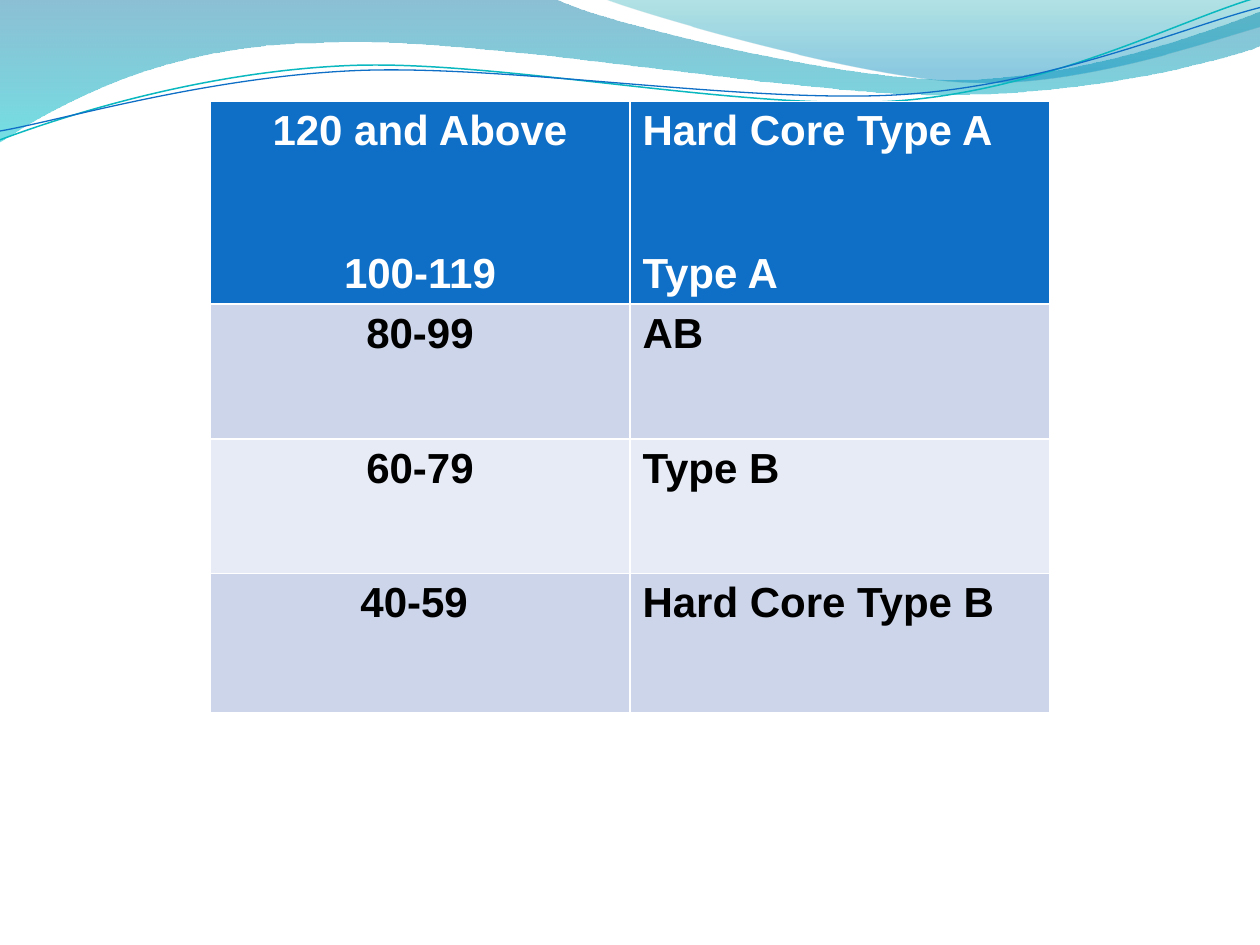
import math

import pptx
import pptx.util
import pptx.dml.color
import pptx.enum.text
import pptx.oxml
import pptx.oxml.ns
from lxml import etree

RGB = pptx.dml.color.RGBColor
WHITE = RGB(0xFF, 0xFF, 0xFF)
BLACK = RGB(0, 0, 0)
BLUE = RGB(0x0F, 0x6F, 0xC6)
TEAL = RGB(0x0A, 0xB8, 0xBF)
DEEP_BLUE = RGB(0x00, 0x74, 0xA1)
CYAN = RGB(0x00, 0xC6, 0xCF)
GREEN = RGB(0x00, 0xA1, 0xA9)
SKY = RGB(0x00, 0x8B, 0xBF)
BAND_DARK = RGB(0xCC, 0xD5, 0xEA)
BAND_LIGHT = RGB(0xE7, 0xEB, 0xF5)

FONT = "Arial"
SIZE = 24
GROUP_GAP = 55  # two line heights, in points
TILT = 357.3  # rotation of the two thin lines, in degrees
CENTER = pptx.enum.text.PP_ALIGN.CENTER
LEFT = pptx.enum.text.PP_ALIGN.LEFT

# Wave outlines on a grid of 10 columns across the slide:
# two numbers are a straight step, six are a Bezier curve.
BACK_WAVE = [
    (0, -0.01), (4.4, -0.01),
    (4.76, 0.17, 6.64, 0.63, 7.58, 0.63), (8.53, 0.63, 9.58, 0.26, 10, 0.09),
    (10.01, 0.36),
    (9.83, 0.44, 8.7, 0.76, 7.46, 0.75), (6.22, 0.75, 3.82, 0.28, 2.57, 0.34),
    (1.29, 0.35, 0.46, 0.83, -0.01, 1.13),
]
FRONT_WAVE = [
    (4.79, -0.01),
    (5.09, 0.11, 6.82, 0.62, 7.69, 0.65), (8.56, 0.69, 9.61, 0.32, 10, 0.21),
    (10, 0),
]
TEAL_LINE = [
    (0, 1.11),
    (0.48, 0.93, 1.58, 0.57, 2.77, 0.52), (3.95, 0.47, 5.93, 0.89, 7.13, 0.8),
    (8.33, 0.71, 9.38, 0.15, 9.98, -0.02),
]
BLUE_LINE = [
    (0, 1.04),
    (0.47, 0.96, 1.64, 0.61, 2.83, 0.56), (4.03, 0.51, 5.97, 0.83, 7.17, 0.75),
    (8.36, 0.67, 9.41, 0.21, 10, 0.06),
]
LINE_CENTER = (4.99, 0.58)

# Each row: height, fill, text colour, score ranges, types
ROWS = [
    (1.6, BLUE, WHITE, ["120 and Above", "100-119"], ["Hard Core Type A", "Type A"]),
    (1.07, BAND_DARK, BLACK, ["80-99"], ["AB"]),
    (1.07, BAND_LIGHT, BLACK, ["60-79"], ["Type B"]),
    (1.1, BAND_DARK, BLACK, ["40-59 "], ["Hard Core Type B"]),
]


def level(outline, degrees):
    """Turn an outline back, so that rotating its shape by degrees restores it."""
    cx, cy = LINE_CENTER
    cos, sin = math.cos(math.radians(degrees)), math.sin(math.radians(degrees))
    turned = []
    for step in outline:
        turned.append(())
        for x, y in zip(step[::2], step[1::2]):
            dx, dy = x - cx, y - cy
            turned[-1] += (cx + dx * cos + dy * sin, cy - dx * sin + dy * cos)
    return turned


def add_outline(s, outline, left, top, unit, close):
    """Build a freeform, joining each three points of a curve into one Bezier."""
    points = [(left + x * unit, top + y * unit)
              for step in outline for x, y in zip(step[::2], step[1::2])]
    builder = s.shapes.build_freeform(*points[0], scale=1.0)
    builder.add_line_segments(points[1:], close=close)
    sp = builder.convert_to_shape()
    sp.shadow.inherit = False
    segments = iter(list(sp.element.iter(pptx.oxml.ns.qn("a:lnTo"))))
    for step in outline[1:]:
        first = next(segments)
        if len(step) == 6:
            curve = etree.Element(pptx.oxml.ns.qn("a:cubicBezTo"))
            first.addprevious(curve)
            for segment in (first, next(segments), next(segments)):
                curve.append(segment[0])
                segment.getparent().remove(segment)
    return sp


def fill_gradient(sp, stops):
    """Fill downwards with (position, colour, opacity in percent) stops."""
    sp.line.fill.background()
    sp.fill.gradient()
    sp.fill.gradient_angle = 270
    for stop, (position, color, _) in zip(sp.fill.gradient_stops, stops):
        stop.position = position
        stop.color.rgb = color
    colors = sp.element.spPr.iter(pptx.oxml.ns.qn("a:srgbClr"))
    for node, (_, _, opacity) in zip(list(colors), stops):
        etree.SubElement(node, pptx.oxml.ns.qn("a:alpha"), val=str(opacity * 1000))


def draw_waves(s, left, top, width):
    unit = width / 10
    for outline, stops in (
        (BACK_WAVE, [(0, DEEP_BLUE, 45), (1, CYAN, 55)]),
        (FRONT_WAVE, [(0, GREEN, 30), (0.8, SKY, 45)]),
    ):
        fill_gradient(add_outline(s, outline, left, top, unit, True), stops)
    for outline, color, weight in ((TEAL_LINE, TEAL, 0.85), (BLUE_LINE, BLUE, 0.75)):
        sp = add_outline(s, level(outline, TILT), left, top, unit, False)
        sp.rotation = TILT
        sp.fill.background()
        sp.line.color.rgb = color
        sp.line.width = pptx.util.Pt(weight)


def add_text(p, text, color=BLACK, align=LEFT, space_before=0):
    p.alignment = align
    if space_before:
        p.space_before = pptx.util.Pt(space_before)
    r = p.add_run()
    r.text = text
    r.font.name = FONT
    r.font.size = pptx.util.Pt(SIZE)
    r.font.bold = True
    r.font.color.rgb = color


def set_borders(cell, color, weight):
    tc_pr = cell._tc.get_or_add_tcPr()
    for side in ("lnL", "lnR", "lnT", "lnB"):
        tc_pr.append(pptx.oxml.parse_xml(
            f'<a:{side} {pptx.oxml.ns.nsdecls("a")} w="{pptx.util.Pt(weight)}">'
            f'<a:solidFill><a:srgbClr val="{color}"/></a:solidFill></a:{side}>'))


def draw_score_table(s, left, top, width):
    heights = [pptx.util.Inches(row[0]) for row in ROWS]
    table = s.shapes.add_table(len(ROWS), 2, left, top, width, sum(heights)).table
    for i, (_, fill, color, *columns) in enumerate(ROWS):
        table.rows[i].height = heights[i]
        for j, (lines, align) in enumerate(zip(columns, (CENTER, LEFT))):
            cell = table.cell(i, j)
            set_borders(cell, WHITE, 1)
            cell.fill.solid()
            cell.fill.fore_color.rgb = fill
            tf = cell.text_frame
            for k, line in enumerate(lines):
                p = tf.add_paragraph() if k else tf.paragraphs[0]
                add_text(p, line, color=color, align=align,
                         space_before=GROUP_GAP if k else 0)


def main():
    prs = pptx.Presentation()
    prs.slide_width = pptx.util.Inches(10)
    prs.slide_height = pptx.util.Inches(7.5)
    s = prs.slides.add_slide(prs.slide_layouts[6])
    width, height = prs.slide_width, prs.slide_height
    draw_waves(s, 0, 0, width)
    draw_score_table(s, width // 6, int(height * 0.1075), width * 2 // 3)
    prs.save("out.pptx")


if __name__ == "__main__":
    main()
